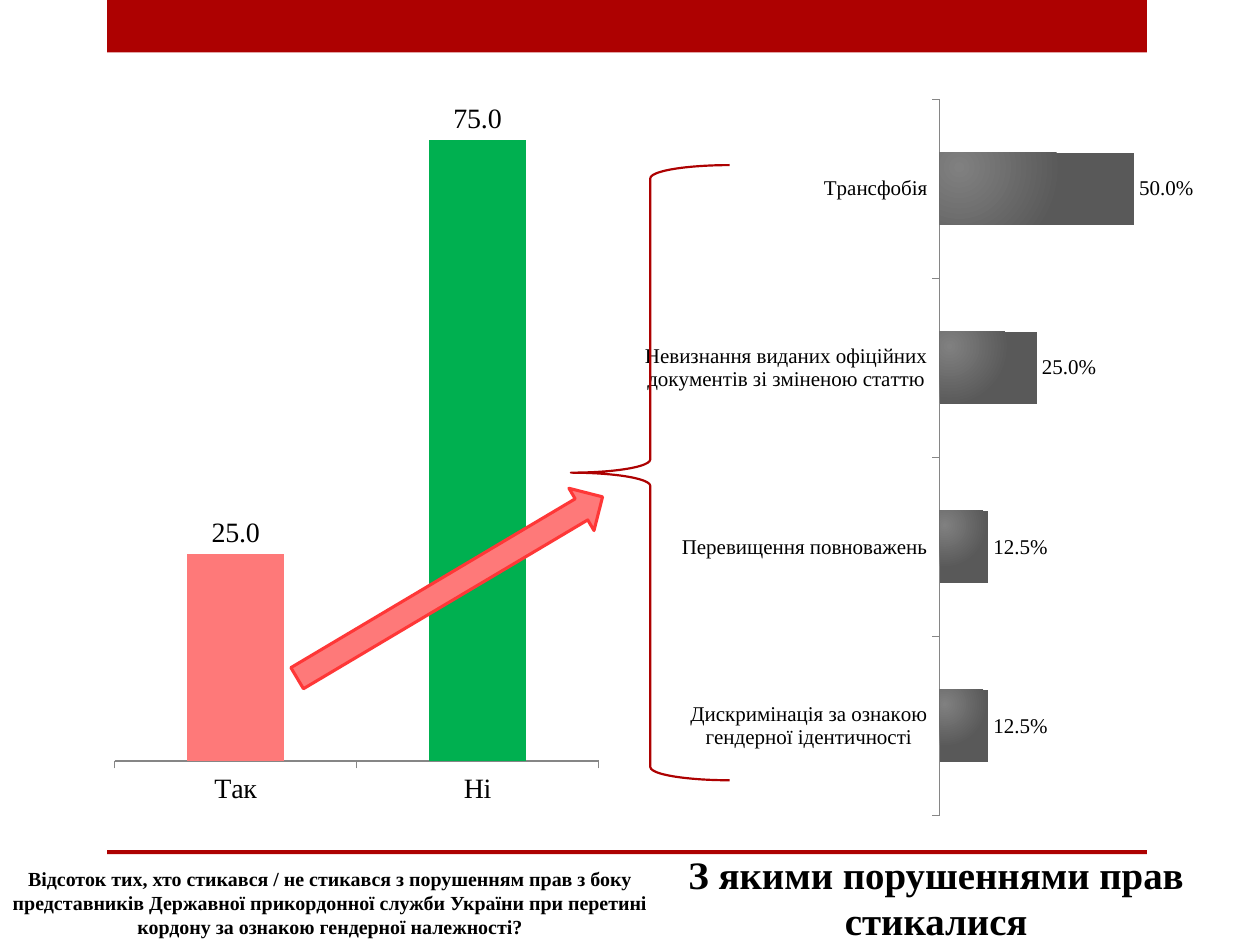
from lxml import etree
from pptx import Presentation
from pptx import util as u
from pptx.chart.data import CategoryChartData
from pptx.dml.color import RGBColor
from pptx.enum import chart as ch
from pptx.enum import shapes, text
from pptx.oxml import parse_xml
from pptx.oxml.ns import nsdecls, qn

RED = RGBColor(0xAD, 0x01, 0x01)
PINK = RGBColor(0xFE, 0x79, 0x79)
BRIGHT_RED = RGBColor(0xFE, 0x37, 0x37)
GREEN = RGBColor(0x00, 0xB0, 0x50)
LIGHT_GREY = RGBColor(0x80, 0x80, 0x80)
DARK_GREY = RGBColor(0x59, 0x59, 0x59)
AXIS_GREY = RGBColor(0x86, 0x86, 0x86)
BLACK = RGBColor(0, 0, 0)
FONT = "Times New Roman"


def apply(target, values):
    for name, value in values.items():
        setattr(target, name, value)


def cm(box):
    return [u.Cm(length) for length in box]


def add_figure(page, kind, box, fill=None, line=None, width=1, rotation=0):
    figure = page.shapes.add_shape(kind, *cm(box))
    figure.shadow.inherit = False
    figure.rotation = rotation
    if fill is None:
        figure.fill.background()
    else:
        figure.fill.solid()
        figure.fill.fore_color.rgb = fill
    if line is None:
        figure.line.fill.background()
    else:
        figure.line.color.rgb = line
        figure.line.width = u.Pt(width)


def add_caption(page, box, words, size):
    frame = page.shapes.add_textbox(*cm(box)).text_frame
    apply(frame, {"word_wrap": True, "vertical_anchor": text.MSO_ANCHOR.BOTTOM})
    para = frame.paragraphs[0]
    para.alignment = text.PP_ALIGN.CENTER
    span = para.add_run()
    span.text = words
    apply(span.font, {"name": FONT, "size": u.Pt(size), "bold": True})
    span.font.color.rgb = BLACK


def set_plot_area(chart, area):
    """Fix the inner plot area, given as x, y, w, h fractions of the chart."""
    plot_area = chart._chartSpace.chart.plotArea
    for old in plot_area.findall(qn("c:layout")):
        plot_area.remove(old)
    layout = etree.Element(qn("c:layout"))
    manual = etree.SubElement(layout, qn("c:manualLayout"))
    values = {"layoutTarget": "inner", "xMode": "edge", "yMode": "edge"}
    values.update(zip("xywh", area))
    for name, value in values.items():
        etree.SubElement(manual, qn(f"c:{name}")).set("val", str(value))
    plot_area.insert(0, layout)


def add_bars(page, box, kind, data, number_format, size, top, area):
    """Add a one-series chart with a hidden value axis; return its series."""
    chart_data = CategoryChartData()
    chart_data.categories = list(data)
    chart_data.add_series("Series 1", list(data.values()))
    chart = page.shapes.add_chart(kind, *cm(box), chart_data).chart
    apply(chart, {"has_legend": False, "has_title": False})
    apply(chart.font, {"name": FONT, "size": u.Pt(size)})
    chart.font.color.rgb = BLACK
    apply(chart.value_axis, {"visible": False, "has_major_gridlines": False,
                             "minimum_scale": 0, "maximum_scale": top})
    axis = chart.category_axis
    axis.major_tick_mark = ch.XL_TICK_MARK.OUTSIDE
    axis.format.line.color.rgb = AXIS_GREY
    plot = chart.plots[0]
    apply(plot, {"gap_width": 150, "vary_by_categories": False,
                 "has_data_labels": True})
    apply(plot.data_labels, {"show_value": True, "number_format": number_format,
                             "number_format_is_linked": False,
                             "position": ch.XL_LABEL_POSITION.OUTSIDE_END})
    set_plot_area(chart, area)
    series = plot.series[0]
    series.format.fill.solid()
    series.format.fill.fore_color.rgb = RED
    return chart, series


def add_share_chart(page, box):
    series = add_bars(page, box, ch.XL_CHART_TYPE.COLUMN_CLUSTERED,
                      {"Так": 25, "Ні": 75}, "###0.0", 16, 80,
                      (0.02, 0.02, 0.96, 0.9))[1]
    for index, color in enumerate((PINK, GREEN)):
        fill = series.points[index].format.fill
        fill.solid()
        fill.fore_color.rgb = color


def add_violation_chart(page, box):
    data = {
        "Трансфобія": 0.5,
        "Невизнання виданих офіційних документів зі зміненою статтю": 0.25,
        "Перевищення повноважень": 0.125,
        "Дискримінація за ознакою гендерної ідентичності": 0.125,
    }
    chart, series = add_bars(page, box, ch.XL_CHART_TYPE.BAR_CLUSTERED, data,
                             "###0.0%", 12, 0.6, (0.54, 0.02, 0.42, 0.96))
    chart.category_axis.reverse_order = True
    fill = series.format.fill
    fill.gradient()
    for stop, color in zip(fill.gradient_stops, (LIGHT_GREY, DARK_GREY)):
        stop.color.rgb = color
    linear = next(series._element.iter(qn("a:lin")))
    linear.getparent().replace(linear, parse_xml(
        f'<a:path {nsdecls("a")} path="circle"><a:fillToRect l="10000" '
        't="20000" r="90000" b="80000"/></a:path>'))


def add_frame(page, box):
    """Red band at the top of the box and thin rule at its bottom."""
    left, top, width, height = box
    for offset, thickness in ((0, 1.06), (height - 0.08, 0.08)):
        add_figure(page, shapes.MSO_SHAPE.RECTANGLE,
                   (left, top + offset, width, thickness), RED)


def main():
    deck = Presentation()
    apply(deck, {"slide_width": u.Cm(25.4), "slide_height": u.Cm(19.05)})
    page = deck.slides.add_slide(deck.slide_layouts[6])
    add_frame(page, (2.16, 0, 20.96, 17.22))
    add_caption(page, (12.88, 17.37, 11.99, 1.78),
                "З якими порушеннями прав стикалися", 22.2)
    add_share_chart(page, (2.11, 1.7, 10.16, 14.83))
    add_violation_chart(page, (12.9, 1.7, 11.2, 15.04))
    add_caption(page, (0, 17.27, 13.31, 1.78),
                "Відсоток тих, хто стикався / не стикався з порушенням прав "
                "з боку представників Державної прикордонної служби України "
                "при перетині кордону за ознакою гендерної належності?", 11.4)
    add_figure(page, shapes.MSO_SHAPE.RIGHT_ARROW, (5.49, 11.35, 7.16, 0.99),
               PINK, BRIGHT_RED, 1.75, 329.3)
    add_figure(page, shapes.MSO_SHAPE.LEFT_BRACE, (11.51, 3.33, 3.2, 12.4),
               line=RED, width=1.25)
    deck.save("out.pptx")


if __name__ == "__main__":
    main()
